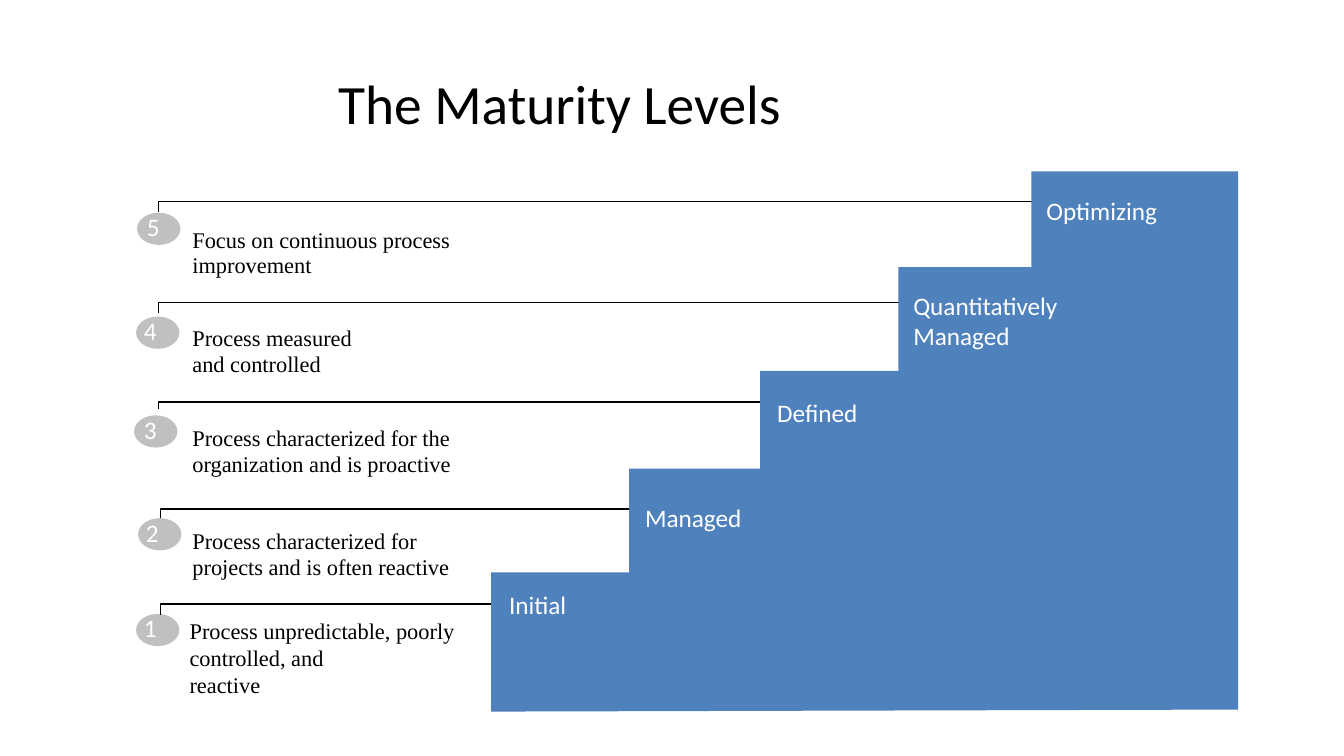
import pptx
import pptx.util
import pptx.dml.color
import pptx.enum.shapes
import pptx.enum.text

Inches = pptx.util.Inches
Pt = pptx.util.Pt

COLORS = {"ink": "000000", "paper": "FFFFFF", "badge": "C0C0C0", "stairs": "4F81BD"}
LABEL_FONT = "Calibri"
BODY_FONT = "Times New Roman"


def rgb(name):
    return pptx.dml.color.RGBColor.from_string(COLORS[name])


class SlideBuilder:
    """Holds the current page and draws each kind of element on it."""

    def __init__(self, page):
        self.page = page

    def text(self, box_at, paragraphs, font, size, color, spacing=1.0, inset=(0.1, 0.05),
             align=pptx.enum.text.PP_ALIGN.LEFT, anchor=pptx.enum.text.MSO_ANCHOR.TOP):
        box = self.page.shapes.add_textbox(*map(Inches, box_at))
        frame = box.text_frame
        frame.word_wrap = True
        frame.vertical_anchor = anchor
        frame.margin_left = frame.margin_right = Inches(inset[0])
        frame.margin_top = frame.margin_bottom = Inches(inset[1])
        for index, lines in enumerate(paragraphs):
            para = frame.add_paragraph() if index else frame.paragraphs[0]
            para.alignment = align
            para.line_spacing = spacing
            for number, line in enumerate(lines.split("\n")):
                if number:
                    para.add_line_break()
                span = para.add_run()
                span.text = line
                span.font.name = font
                span.font.size = Pt(size)
                span.font.color.rgb = rgb(color)

    def ellipse(self, box_at, fill):
        oval = self.page.shapes.add_shape(
            pptx.enum.shapes.MSO_SHAPE.OVAL, *map(Inches, box_at))
        self.finish(oval, fill=fill)

    def outline(self, points, fill=None, line=None):
        start, *rest = points
        builder = self.page.shapes.build_freeform(
            Inches(start[0]), Inches(start[1]), scale=1.0)
        builder.add_line_segments(
            [(Inches(x), Inches(y)) for x, y in rest], close=fill is not None)
        self.finish(builder.convert_to_shape(), fill, line)

    def finish(self, shape, fill=None, line=None):
        shape.shadow.inherit = False
        if fill:
            shape.fill.solid()
            shape.fill.fore_color.rgb = rgb(fill)
        else:
            shape.fill.background()
        if line:
            shape.line.color.rgb = rgb(line)
            shape.line.width = Pt(1)
        else:
            shape.line.fill.background()


# Per level: badge corner, digit left, bracket (left, top, drop, right), description
LEVELS = [
    ("1", (1.35, 6.09), 1.33, (1.59, 5.99, 0.11, 5.03),
     (1.79, 6.08, 3.11, 1.11), ["Process unpredictable, poorly controlled, and", "reactive"]),
    ("2", (1.37, 5.14), 1.35, (1.59, 5.05, 0.09, 6.29),
     (1.81, 5.2, 2.95, 0.61), ["Process characterized for projects and is often reactive"]),
    ("3", (1.33, 4.12), 1.33, (1.59 - 0.02, 3.99, 0.07, 7.68),
     (1.81, 4.18, 2.85, 0.61), ["Process characterized for the organization and is proactive"]),
    ("4", (1.35, 3.14), 1.33, (1.57, 3, 0.11, 9.07),
     (1.81, 3.19, 3.01, 0.61), ["Process measured\nand controlled"]),
    ("5", (1.36, 2.11), 1.36, (1.57, 2, 0.1, 10.38),
     (1.81, 2.21, 3.32, 0.61), ["Focus on continuous process improvement"]),
]

# Left edge and top of each step, lowest first
STEPS = [(4.87, 5.68), (6.24, 4.65), (7.54, 3.68), (8.91, 2.65), (10.23, 1.7)]
STAIRS_RIGHT = 12.28

STEP_LABELS = [
    ((4.95, 5.72, 2.25, 0.47), ["Initial"], 1.25),
    ((6.3, 4.86, 2.33, 0.48), ["Managed"], 1.25),
    ((7.61, 3.82, 1.88, 0.48), ["Defined"], 1.25),
    ((8.96, 2.83, 2.55, 0.7), ["Quantitatively", "Managed"], 1.0),
    ((10.28, 1.81, 2.03, 0.47), ["Optimizing"], 1.25),
]


def main():
    deck = pptx.Presentation()
    deck.slide_width = Inches(13.33)
    deck.slide_height = Inches(7.5)
    draw = SlideBuilder(deck.slides.add_slide(deck.slide_layouts[6]))

    # Title
    draw.text((0.33, 0.75, 10.44, 0.52), ["The Maturity Levels"], LABEL_FONT, 39.6, "ink",
              align=pptx.enum.text.PP_ALIGN.CENTER,
              anchor=pptx.enum.text.MSO_ANCHOR.MIDDLE)

    # Numbered badges, brackets and descriptions
    for digit, (left, top), digit_left, bracket, box_at, description in LEVELS:
        draw.ellipse((left, top, 0.43, 0.32), "badge")
        draw.text((digit_left, top + 0.07, 0.6, 0.25), [digit],
                  LABEL_FONT, 18, "paper", spacing=0.5)
        start, level, drop, end = bracket
        draw.outline([(start, level + drop), (start, level), (end, level)], line="ink")
        first = digit == "1"
        draw.text(box_at, description, BODY_FONT, 16, "ink",
                  spacing=1.0 if first else 0.95,
                  inset=(0.09, 0.04) if first else (0.1, 0.05))

    # Staircase: each step rises at its left edge and runs to the next one
    corners = [(STEPS[0][0], 7.06)]
    rights = [left for left, _ in STEPS[1:]] + [STAIRS_RIGHT]
    for (left, top), right in zip(STEPS, rights):
        corners += [(left, top), (right, top)]
    corners.append((STAIRS_RIGHT, 7.04))
    draw.outline(corners, fill="stairs")

    # Step names
    for box_at, names, spacing in STEP_LABELS:
        draw.text(box_at, names, LABEL_FONT, 18, "paper", spacing=spacing)

    deck.save("out.pptx")


if __name__ == "__main__":
    main()
